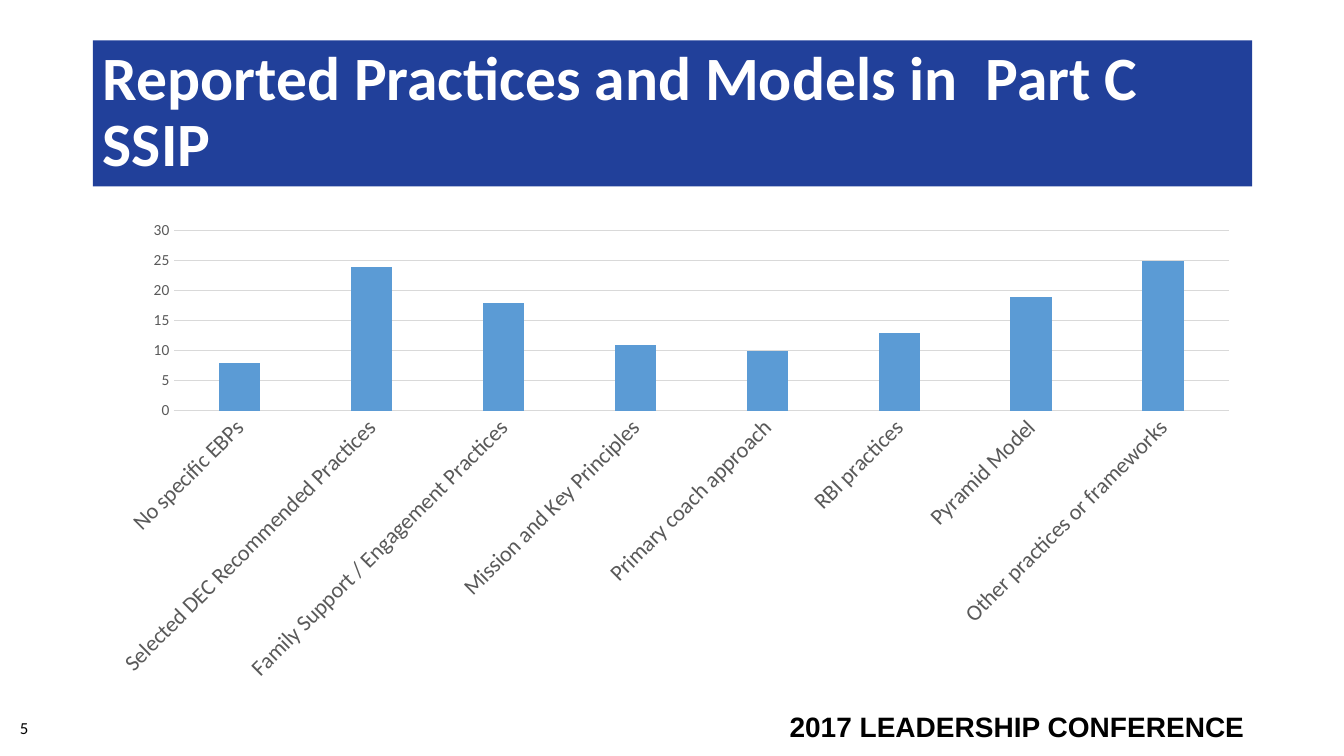
"""Build the slide on reported practices and models in Part C SSIP."""
import pptx
import pptx.chart.data
import pptx.dml.color
import pptx.enum.chart
import pptx.enum.text
import pptx.util

Inches, Pt = pptx.util.Inches, pptx.util.Pt
PP_ALIGN = pptx.enum.text.PP_ALIGN
MIDDLE = pptx.enum.text.MSO_ANCHOR.MIDDLE

TITLE = "Reported Practices and Models in  Part C SSIP"
CONFERENCE = "2017 LEADERSHIP CONFERENCE"
PAGE = "5"
PRACTICES = {
    "No specific EBPs": 8,
    "Selected DEC Recommended Practices": 24,
    "Family Support / Engagement Practices": 18,
    "Mission and Key Principles": 11,
    "Primary coach approach": 10,
    "RBI practices": 13,
    "Pyramid Model": 19,
    "Other practices or frameworks": 25,
}
COLORS = {"banner": "21409A", "bar": "5B9BD5", "label": "595959",
          "grid": "D9D9D9", "white": "FFFFFF", "black": "000000"}
LEFT, WIDTH = Inches(0.92), Inches(11.5)


def rgb(name):
    return pptx.dml.color.RGBColor.from_string(COLORS[name])


def style(font, size, color, face="Calibri", bold=False):
    font.size, font.name, font.bold = Pt(size), face, bold
    font.color.rgb = rgb(color)


def add_label(slide, text, box, align, size, face, bold):
    frame = slide.shapes.add_textbox(*map(Inches, box)).text_frame
    frame.word_wrap = True
    frame.vertical_anchor = MIDDLE
    frame.text = text
    line = frame.paragraphs[0]
    line.alignment = align
    style(line.runs[0].font, size, "black", face, bold)


def add_title(slide):
    banner = slide.shapes.title
    banner.left, banner.top = LEFT, Inches(0.4)
    banner.width, banner.height = WIDTH, Inches(1.45)
    banner.fill.solid()
    banner.fill.fore_color.rgb = rgb("banner")
    frame = banner.text_frame
    frame.text = TITLE
    frame.word_wrap = True
    frame.auto_size = pptx.enum.text.MSO_AUTO_SIZE.NONE
    frame.vertical_anchor = MIDDLE
    heading = frame.paragraphs[0]
    heading.alignment = PP_ALIGN.LEFT
    heading.line_spacing = 0.9
    style(heading.runs[0].font, 44, "white", bold=True)


def add_practice_chart(slide):
    counts = pptx.chart.data.CategoryChartData()
    counts.categories = list(PRACTICES)
    counts.add_series("Series 1", list(PRACTICES.values()))
    chart = slide.shapes.add_chart(
        pptx.enum.chart.XL_CHART_TYPE.COLUMN_CLUSTERED,
        LEFT, Inches(2.1), WIDTH, Inches(4.76), counts).chart
    chart.has_legend = chart.has_title = False
    style(chart.font, 10, "black")

    plot = chart.plots[0]
    plot.gap_width, plot.overlap = 219, -27
    plot.vary_by_categories = False
    bars = plot.series[0].format.fill
    bars.solid()
    bars.fore_color.rgb = rgb("bar")

    practice_axis, count_axis = chart.category_axis, chart.value_axis
    for axis, size in ((practice_axis, 16), (count_axis, 11)):
        axis.major_tick_mark = pptx.enum.chart.XL_TICK_MARK.NONE
        axis.minor_tick_mark = pptx.enum.chart.XL_TICK_MARK.NONE
        style(axis.tick_labels.font, size, "label")
    practice_axis._element.txPr.bodyPr.set("rot", "-2700000")
    count_axis.minimum_scale, count_axis.maximum_scale = 0, 30
    count_axis.major_unit = 5
    count_axis.has_major_gridlines = True
    count_axis.format.line.fill.background()
    for line in (practice_axis.format.line, count_axis.major_gridlines.format.line):
        line.color.rgb = rgb("grid")
        line.width = Pt(0.75)


def main():
    deck = pptx.Presentation()
    deck.slide_width, deck.slide_height = Inches(13.33), Inches(7.5)
    slide = deck.slides.add_slide(deck.slide_layouts[5])
    add_title(slide)
    add_practice_chart(slide)
    add_label(slide, CONFERENCE, (7.52, 7, 4.92, 0.42), PP_ALIGN.RIGHT, 20, "Arial", True)
    add_label(slide, PAGE, (0.1, 7.02, 3, 0.4), PP_ALIGN.LEFT, 12, "Calibri", False)
    deck.save("out.pptx")


if __name__ == "__main__":
    main()
